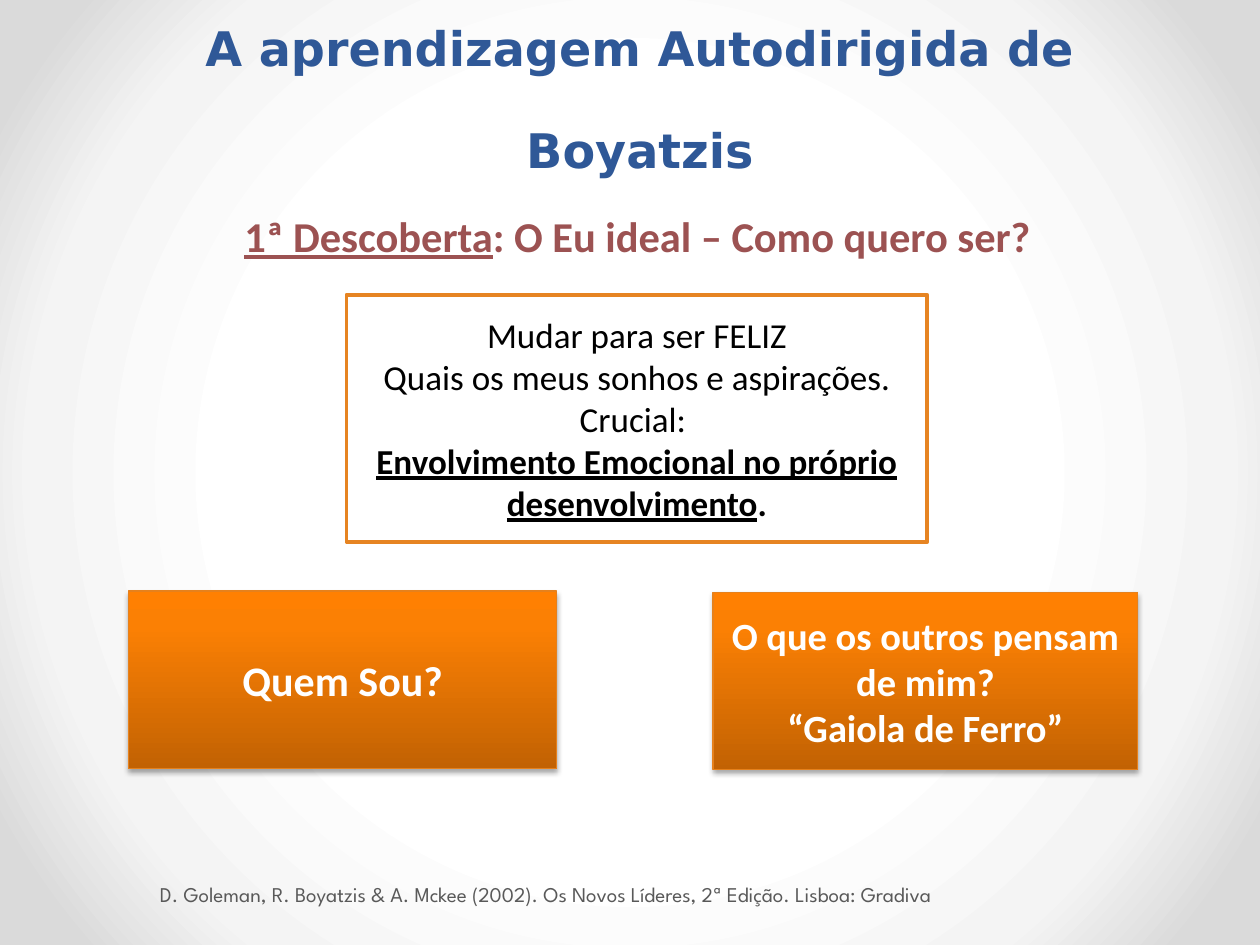
from dataclasses import dataclass

from lxml import etree
from pptx import Presentation
from pptx.dml.color import RGBColor
from pptx.enum.shapes import MSO_SHAPE
from pptx.enum.text import MSO_ANCHOR, MSO_AUTO_SIZE, PP_ALIGN
from pptx.oxml import parse_xml
from pptx.oxml.ns import nsdecls, qn
from pptx.util import Inches, Pt

RECTANGLE = MSO_SHAPE.RECTANGLE
CENTER, LEFT = PP_ALIGN.CENTER, PP_ALIGN.LEFT
BOTTOM, MIDDLE = MSO_ANCHOR.BOTTOM, MSO_ANCHOR.MIDDLE
NO_AUTOFIT = MSO_AUTO_SIZE.NONE


@dataclass(frozen=True)
class Theme:
    heading: str = "2F5897"
    discovery: str = "9C5252"
    dark: str = "000000"
    light: str = "FFFFFF"
    citation: str = "595959"
    frame: str = "E68422"
    edge: str = "E6811C"
    card_stops: tuple = ((0, "C26203"), (80, "FB8004"), (100, "FF8002"))
    backdrop_stops: tuple = ((50, "FFFFFF"), (76, "F4F4F4"), (92, "DADADA"))
    body_font: str = "Calibri"
    heading_font: str = "DejaVu Sans"
    citation_font: str = "League Spartan"
    heading_size: float = 27.2
    discovery_size: float = 24.3
    self_size: float = 24
    others_size: float = 22
    ideal_size: float = 20
    citation_size: float = 12
    title_spacing: float = 58


theme = Theme()


def set_gradient(fill, element, stops, direction):
    fill.gradient()
    gradient = element.find(".//" + qn("a:gradFill"))
    colours = "".join(
        f'<a:gs pos="{position * 1000}"><a:srgbClr val="{colour}"/></a:gs>'
        for position, colour in stops
    )
    gradient.getparent().replace(gradient, parse_xml(
        f'<a:gradFill {nsdecls("a")} rotWithShape="1">'
        f"<a:gsLst>{colours}</a:gsLst>{direction}</a:gradFill>"
    ))


def write(shape, paragraphs, size, colour, font=theme.body_font,
          align=CENTER, anchor=MIDDLE, spacing=None):
    frame = shape.text_frame
    frame.word_wrap = True
    frame.auto_size = NO_AUTOFIT
    frame.vertical_anchor = anchor
    for index, runs in enumerate(paragraphs):
        paragraph = frame.add_paragraph() if index else frame.paragraphs[0]
        paragraph.alignment = align
        if spacing:
            paragraph.line_spacing = Pt(spacing)
        for text, bold, underline in runs:
            run = paragraph.add_run()
            run.text = text
            run.font.name = font
            run.font.size = Pt(size)
            run.font.bold = bold
            run.font.underline = underline
            run.font.color.rgb = RGBColor.from_string(colour)


presentation = Presentation()
presentation.slide_width = Inches(10)
presentation.slide_height = Inches(7.5)
slide = presentation.slides.add_slide(presentation.slide_layouts[5])
set_gradient(
    slide.background.fill, slide.element, theme.backdrop_stops,
    '<a:path path="circle"><a:fillToRect l="50000" t="50000" r="50000" b="50000"/></a:path>',
)

discovery = slide.shapes.title
discovery.left, discovery.top = Inches(0.56), Inches(1.43)
discovery.width, discovery.height = Inches(9), Inches(0.69)
write(discovery,
      [[("1ª Descoberta", True, True), (": O Eu ideal – Como quero ser?", True, False)]],
      theme.discovery_size, theme.discovery, anchor=BOTTOM, spacing=theme.title_spacing)

questions = [
    (1.02, 4.69, 3.4, theme.self_size, ["Quem Sou?"]),
    (5.66, 4.7, 3.37, theme.others_size,
     ["O que os outros pensam de mim?", "“Gaiola de Ferro”"]),
]
for left, top, width, size, lines in questions:
    card = slide.shapes.add_shape(
        RECTANGLE, Inches(left), Inches(top), Inches(width), Inches(1.41))
    set_gradient(card.fill, card.element, theme.card_stops,
                 '<a:lin ang="16200000" scaled="0"/>')
    card.line.color.rgb = RGBColor.from_string(theme.edge)
    card.line.width = Pt(0.75)
    card.shadow.inherit = False
    effects = card.element.spPr.find(qn("a:effectLst"))
    shadow = etree.SubElement(effects, qn("a:outerShdw"), blurRad=str(Pt(3.1)),
                              dist=str(Pt(1.8)), dir="5400000", rotWithShape="0")
    shade = etree.SubElement(shadow, qn("a:srgbClr"), val=theme.dark)
    etree.SubElement(shade, qn("a:alpha"), val="35000")
    write(card, [[(line, True, False)] for line in lines], size, theme.light)

ideal = slide.shapes.add_shape(
    RECTANGLE, Inches(2.75), Inches(2.34), Inches(4.61), Inches(1.96))
ideal.shadow.inherit = False
ideal.fill.solid()
ideal.fill.fore_color.rgb = RGBColor.from_string(theme.light)
ideal.line.color.rgb = RGBColor.from_string(theme.frame)
ideal.line.width = Pt(2.25)
write(ideal, [
    [("Mudar para ser FELIZ", False, False)],
    [("Quais os meus sonhos e aspirações.", False, False)],
    [("Crucial: ", False, False)],
    [("Envolvimento Emocional no próprio desenvolvimento", True, True), (".", True, False)],
], theme.ideal_size, theme.dark)

citation = slide.shapes.add_textbox(Inches(1.22), Inches(6.9), Inches(8.14), Inches(0.4))
citation.text_frame.margin_left = Inches(0.05)
write(citation, [[(
    "D. Goleman, R. Boyatzis & A. Mckee (2002). Os Novos Líderes, 2ª Edição. Lisboa: Gradiva",
    False, False)]], theme.citation_size, theme.citation, theme.citation_font, LEFT)

heading = slide.shapes.add_textbox(Inches(0.58), Inches(0.21), Inches(9), Inches(1.25))
write(heading, [[("A aprendizagem Autodirigida de Boyatzis", True, False)]],
      theme.heading_size, theme.heading, theme.heading_font,
      anchor=BOTTOM, spacing=theme.title_spacing)

presentation.save("out.pptx")
